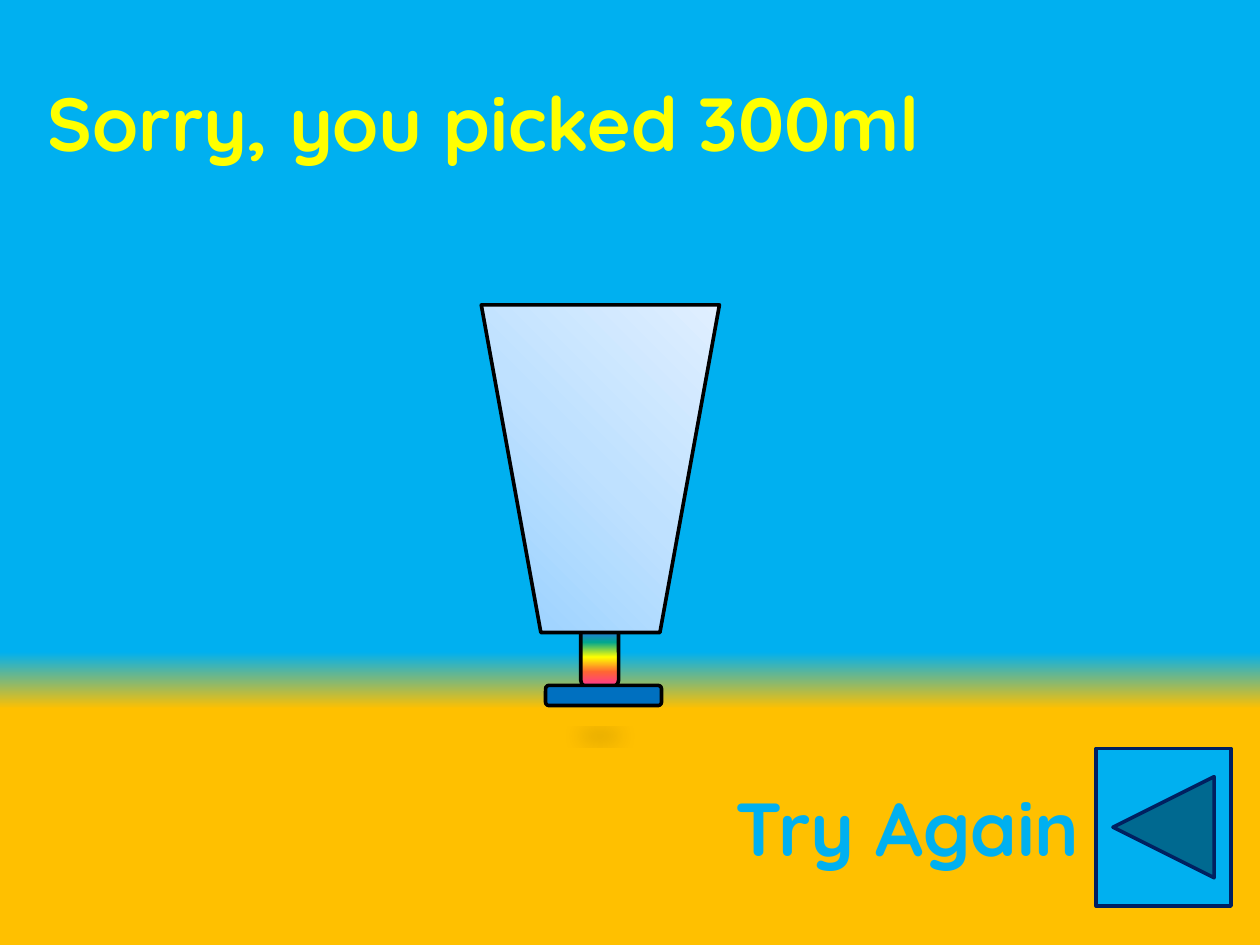
from lxml import etree
from pptx import Presentation
from pptx.dml.color import RGBColor
from pptx.enum.shapes import MSO_SHAPE as Shape
from pptx.enum.text import MSO_ANCHOR, MSO_AUTO_SIZE, PP_ALIGN
from pptx.oxml import parse_xml
from pptx.oxml.ns import nsdecls, qn
from pptx.util import Inches, Pt

SLIDE_SIZE = 10, 7.5
SKY, SAND, NAVY, YELLOW = "00B0F0", "FFC000", "002060", "FFFF00"
BACKDROP = [(69, SKY), (75, SAND)], 90
RAINBOW = [(0, "FF3399"), (25, "FF6633"), (50, YELLOW),
           (75, "01A78F"), (100, "3366FF")], 270
GLASS = [(0, "96D0FF"), (50, "BFE1FF"), (100, "E0EFFF")], 135

# preset, (left, top, width, height), fill, rotation
GOBLET = [
    (Shape.ROUNDED_RECTANGLE, (4.61, 4.98, 0.3, 0.47), RAINBOW, 0),
    (Shape.TRAPEZOID, (3.82, 2.42, 1.89, 2.6), GLASS, 180),
    (Shape.ROUNDED_RECTANGLE, (4.33, 5.44, 0.92, 0.16), "0070C0", 0),
]
VERDICT = "Sorry, you picked 300ml", (0.28, 0.29, 7.24, 1.34), YELLOW
RETRY = "Try Again", (5.74, 5.89, 3.08, 1.34), SKY
BACK_BUTTON = Shape.ACTION_BUTTON_BACK_OR_PREVIOUS, (8.7, 5.94, 1.07, 1.25), SKY


def color(value):
    return RGBColor.from_string(value)


def box(lengths):
    return [Inches(length) for length in lengths]


def set_gradient(fill, owner, stops, angle):
    """Fill with any number of stops; angle runs clockwise in degrees."""
    fill.gradient()
    fill.gradient_angle = -angle % 360
    stop_list = next(owner.iter(qn("a:gsLst")))
    for old_stop in list(stop_list):
        stop_list.remove(old_stop)
    for position, value in stops:
        stop = etree.SubElement(stop_list, qn("a:gs"), pos=str(position * 1000))
        etree.SubElement(stop, qn("a:srgbClr"), val=value)


def add_part(shapes, preset, place, fill, line="000000", rotation=0):
    part = shapes.add_shape(preset, *box(place))
    part.rotation = rotation
    part.shadow.inherit = False
    if isinstance(fill, str):
        part.fill.solid()
        part.fill.fore_color.rgb = color(fill)
    else:
        set_gradient(part.fill, part._element.spPr, *fill)
    part.line.color.rgb = color(line)
    part.line.width = Pt(2.08)
    return part


def cast_shadow_below(part):
    """Add a flattened, mirrored shadow under the part."""
    part._element.spPr.find(qn("a:effectLst")).append(parse_xml(
        f'<a:outerShdw {nsdecls("a")} blurRad="{Pt(12)}" dist="{Pt(25)}" '
        'dir="5400000" sx="90000" sy="-19000" rotWithShape="0">'
        '<a:srgbClr val="000000"><a:alpha val="15000"/></a:srgbClr>'
        '</a:outerShdw>'))


def write(holder, words, place, text_color):
    holder.left, holder.top, holder.width, holder.height = box(place)
    frame = holder.text_frame
    frame.word_wrap = True
    frame.auto_size = MSO_AUTO_SIZE.NONE
    frame.vertical_anchor = MSO_ANCHOR.MIDDLE
    paragraph = frame.paragraphs[0]
    paragraph.alignment = PP_ALIGN.LEFT
    run = paragraph.add_run()
    run.text = words
    run.font.name = "Quicksand"
    run.font.size = Pt(42.9)
    run.font.bold = True
    run.font.color.rgb = color(text_color)
    run.font._element.insert(0, parse_xml(
        f'<a:ln {nsdecls("a")} w="{Pt(0.07)}"><a:solidFill>'
        '<a:srgbClr val="7A7A7A"><a:alpha val="55000"/></a:srgbClr>'
        '</a:solidFill><a:prstDash val="solid"/></a:ln>'))


def main():
    deck = Presentation()
    deck.slide_width, deck.slide_height = box(SLIDE_SIZE)
    slide = deck.slides.add_slide(deck.slide_layouts.get_by_name("Title Only"))
    set_gradient(slide.background.fill, slide._element, *BACKDROP)

    goblet = slide.shapes.add_group_shape()
    stem, *_ = [add_part(goblet.shapes, preset, place, fill, rotation=rotation)
                for preset, place, fill, rotation in GOBLET]
    cast_shadow_below(stem)

    write(slide.shapes.title, *VERDICT)
    write(slide.shapes.add_textbox(0, 0, 0, 0), *RETRY)
    add_part(slide.shapes, *BACK_BUTTON, line=NAVY)
    deck.save("out.pptx")


if __name__ == "__main__":
    main()
